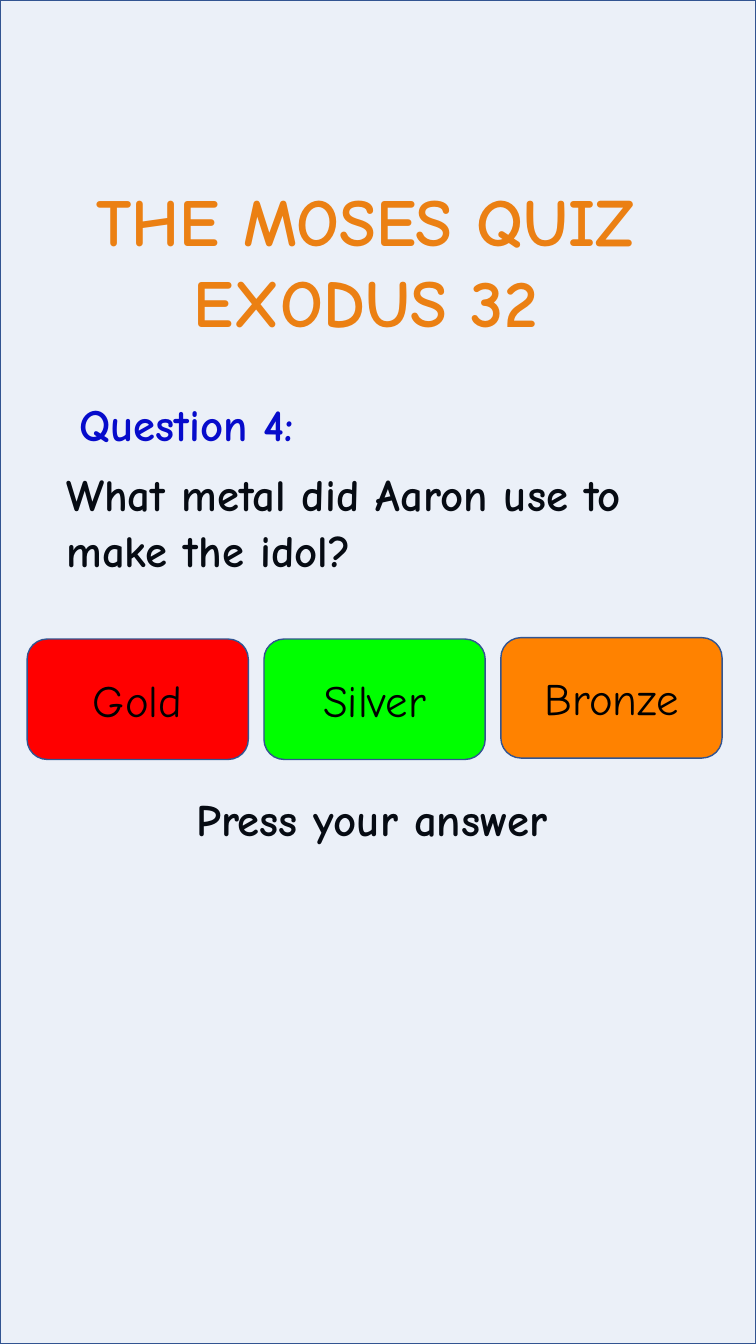
from pptx import Presentation
from pptx.dml.color import RGBColor
from pptx.enum import shapes, text
from pptx.oxml.ns import qn
from pptx.util import Pt
from lxml import etree

FONT = "Comic Neue"
BORDER = "325491"


def rgb(value):
    return RGBColor.from_string(value)


def write(sp, lines, size, color, bold, align, anchor, wrap=True):
    """Fill a shape with equally formatted lines and return its paragraphs."""
    tf = sp.text_frame
    tf.text = "\n".join(lines)
    tf.word_wrap = wrap
    tf.auto_size = text.MSO_AUTO_SIZE.NONE
    tf.vertical_anchor = anchor
    for p in tf.paragraphs:
        p.alignment = align
        p.font.name = FONT
        p.font.size = Pt(size)
        p.font.bold = bold
        p.font.color.rgb = rgb(color)
    return tf.paragraphs


LEFT, CENTER = text.PP_ALIGN.LEFT, text.PP_ALIGN.CENTER
TOP, MIDDLE = text.MSO_ANCHOR.TOP, text.MSO_ANCHOR.MIDDLE

prs = Presentation()
prs.slide_width, prs.slide_height = Pt(540), Pt(960)
s = prs.slides.add_slide(prs.slide_layouts[5])

# Title
title = s.shapes.title
title.left, title.top, title.width, title.height = Pt(13), Pt(124.5), Pt(496), Pt(124)
write(title, ["THE MOSES QUIZ", "EXODUS 32"], 48, "FF8200", True, CENTER, TOP, wrap=False)

# Question and prompt
label = s.shapes.add_textbox(Pt(33.5), Pt(280), Pt(199.5), Pt(46))
write(label, ["Question 4:"], 32, "0000CC", True, CENTER, TOP, wrap=False)

question = s.shapes.add_textbox(Pt(40.3), Pt(328.3), Pt(458), Pt(105))
p = write(question, ["What metal did Aaron use to make the idol?"], 32, "000000", True, LEFT, TOP)[0]
p.line_spacing = Pt(40)
p.space_before = Pt(7.5)

prompt = s.shapes.add_textbox(Pt(133.2), Pt(566), Pt(304), Pt(52))
p = write(prompt, ["Press your answer"], 32, "000000", True, LEFT, TOP)[0]
p.line_spacing = 0.9
p.space_before = Pt(7.5)

# Translucent tint over the whole slide
tint = s.shapes.add_shape(shapes.MSO_SHAPE.RECTANGLE, 0, 0, prs.slide_width, prs.slide_height)
tint.shadow.inherit = False
tint.fill.solid()
tint.fill.fore_color.rgb = rgb("4472C4")
tint.line.color.rgb = rgb(BORDER)
tint.line.width = Pt(1)
fill_color = tint.fill._xPr.find(qn("a:solidFill")).find(qn("a:srgbClr"))
etree.SubElement(fill_color, qn("a:alpha"), val="10000")

# Answer buttons
answers = [("Gold", "FF0000", 456.5), ("Silver", "00FF00", 456.5), ("Bronze", "FF8200", 455.5)]
for i, (answer, color, top) in enumerate(answers):
    button = s.shapes.add_shape(
        shapes.MSO_SHAPE.ROUNDED_RECTANGLE, Pt(19.4 + 169.2 * i), Pt(top), Pt(158), Pt(86))
    button.shadow.inherit = False
    button.fill.solid()
    button.fill.fore_color.rgb = rgb(color)
    button.line.color.rgb = rgb(BORDER)
    button.line.width = Pt(1)
    write(button, [answer], 32, "000000", False, CENTER, MIDDLE)

prs.save("out.pptx")
